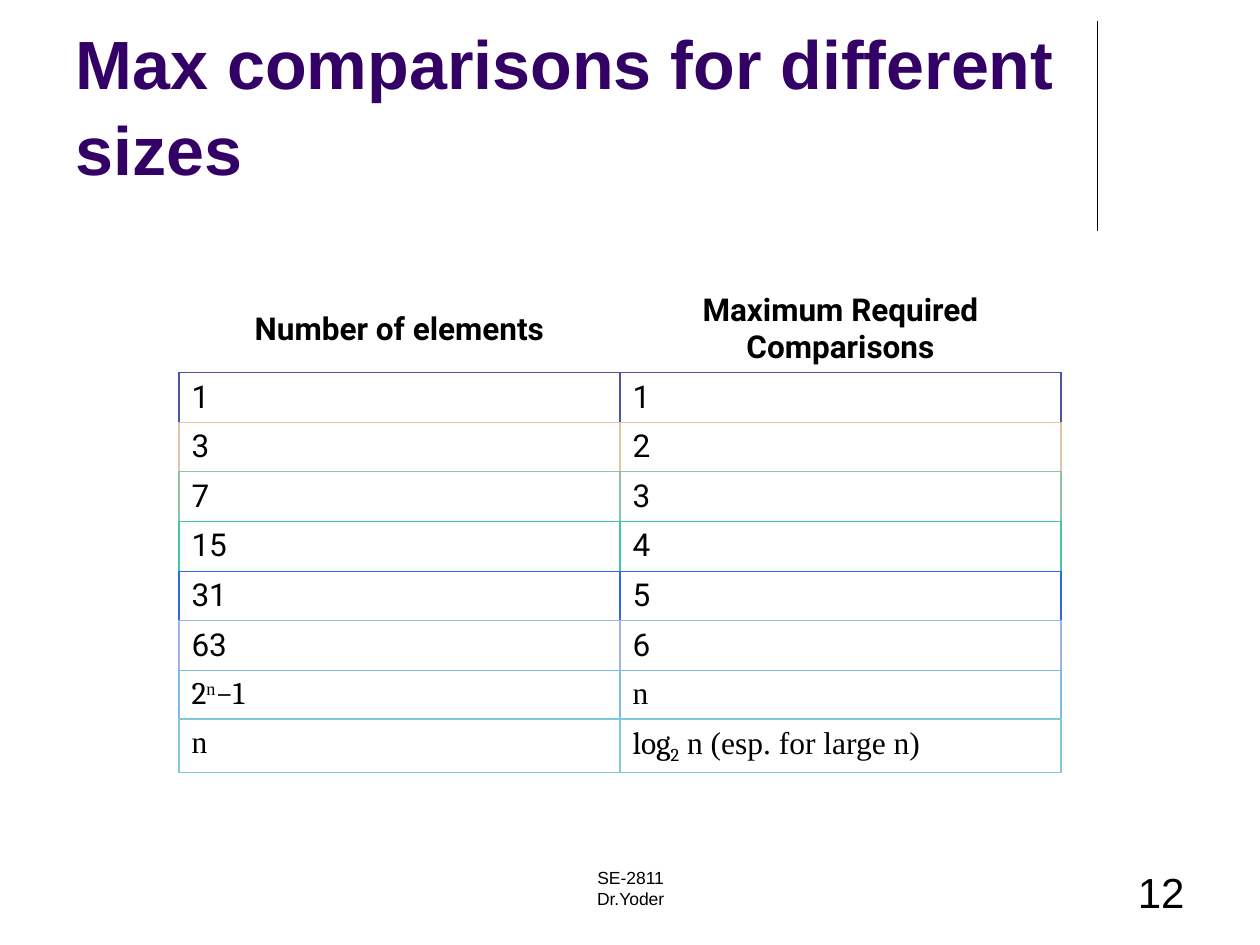
from lxml.etree import SubElement
from pptx import Presentation
from pptx.dml.color import RGBColor
from pptx.enum.shapes import MSO_CONNECTOR
from pptx.enum.text import MSO_ANCHOR, MSO_AUTO_SIZE, PP_ALIGN
from pptx.oxml import parse_xml
from pptx.oxml.ns import nsdecls, qn
from pptx.util import Inches, Pt

BLACK = RGBColor(0x00, 0x00, 0x00)
PURPLE = RGBColor(0x33, 0x00, 0x66)
ROW_COLORS = [RGBColor.from_string(c) for c in (
    "5054A5", "E0C4A5", "90C3A5", "40C5A5", "3066E7", "A0B5E7", "80BAE7", "80CAD9")]

SANS, SERIF, MATH = "Roboto", "Times New Roman", "Cambria"
HEADERS = ["Number of elements", "Maximum Required Comparisons"]
# Each cell is a list of runs: text, font, baseline shift in percent
ROWS = [[[(str(2 ** k - 1), SANS, 0)], [(str(k), SANS, 0)]] for k in range(1, 7)] + [
    [[("2", MATH, 0), ("n", SERIF, 30), ("−1", MATH, 0)], [("n", SERIF, 0)]],
    [[("n", SERIF, 0)],
     [("log", MATH, 0), ("2", MATH, -25), (" n (esp. for large n)", SERIF, 0)]],
]
HEADER_HEIGHT, ROW_HEIGHT, LAST_HEIGHT = 0.68, 0.39, 0.42


def style_font(font, name, size, color=BLACK, bold=False):
    font.name, font.size, font.bold = name, Pt(size), bold
    font.color.rgb = color


def add_title(slide, text):
    sp = slide.shapes.title
    sp.left, sp.top, sp.width, sp.height = map(Inches, (0.5, 0.13, 8.25, 1.42))
    tf = sp.text_frame
    tf.text = text
    tf.auto_size = MSO_AUTO_SIZE.NONE
    tf.vertical_anchor = MSO_ANCHOR.BOTTOM
    p = tf.paragraphs[0]
    p.alignment = PP_ALIGN.LEFT
    p.line_spacing = 1.05
    style_font(p.runs[0].font, "Arial", 39, PURPLE, True)


def add_rule(slide):
    line = slide.shapes.add_connector(
        MSO_CONNECTOR.STRAIGHT, Inches(8.71), Inches(0.17), Inches(8.71), Inches(1.83))
    line.line.color.rgb = BLACK
    line.line.width = Pt(0.75)
    SubElement(line._element.spPr, qn("a:effectLst"))


def add_text(slide, left, width, lines, size, align):
    sp = slide.shapes.add_textbox(Inches(left), Inches(6.83), Inches(width), Inches(0.5))
    tf = sp.text_frame
    tf.word_wrap = True
    tf.text = "\n".join(lines)
    for p in tf.paragraphs:
        p.alignment = align
        style_font(p.runs[0].font, "Arial", size)


def set_borders(cell, borders):
    """Draw borders given as (side, colour, points), in the order L, R, T, B."""
    tc_pr = cell._tc.get_or_add_tcPr()
    for i, (side, color, width) in enumerate(borders):
        tc_pr.insert(i, parse_xml(
            f'<a:ln{side} {nsdecls("a")} w="{Pt(width)}"><a:solidFill>'
            f'<a:srgbClr val="{color}"/></a:solidFill></a:ln{side}>'))


def fill_cell(cell, runs, bold=False):
    cell.fill.background()
    p = cell.text_frame.paragraphs[0]
    for text, font, shift in runs:
        r = p.add_run()
        r.text = text
        style_font(r.font, font, 18, bold=bold)
        if shift:
            r.font._element.set("baseline", str(shift * 1000))


def add_comparison_table(slide):
    heights = [HEADER_HEIGHT] + [ROW_HEIGHT] * (len(ROWS) - 1) + [LAST_HEIGHT]
    table = slide.shapes.add_table(
        len(heights), 2, Inches(1.42), Inches(2.27), Inches(7), Inches(sum(heights))).table
    table.first_row = table.horz_banding = False
    for row, height in zip(table.rows, heights):
        row.height = Inches(height)

    for c, header in enumerate(HEADERS):
        cell = table.cell(0, c)
        fill_cell(cell, [(header, SANS, 0)], bold=True)
        cell.vertical_anchor = MSO_ANCHOR.MIDDLE
        cell.text_frame.paragraphs[0].alignment = PP_ALIGN.CENTER
        set_borders(cell, [("B", ROW_COLORS[0], 0.6)])

    last = len(ROWS) - 1
    for i, row in enumerate(ROWS):
        color, below = ROW_COLORS[i], ROW_COLORS[min(i + 1, last)]
        top = 1.2 if i == last else 0.6
        bottom = 1.2 if i == last - 1 else 0.6
        for c, runs in enumerate(row):
            cell = table.cell(i + 1, c)
            fill_cell(cell, runs)
            set_borders(cell, [("L", color, 1), ("R", color, 1),
                               ("T", color, top), ("B", below, bottom)])


def main():
    prs = Presentation()
    prs.slide_width, prs.slide_height = Inches(10), Inches(7.5)
    slide = prs.slides.add_slide(prs.slide_layouts[5])
    add_rule(slide)
    add_title(slide, "Max comparisons for different sizes")
    add_comparison_table(slide)
    add_text(slide, 3.42, 3.17, ["SE-2811", "Dr.Yoder"], 10, PP_ALIGN.CENTER)
    add_text(slide, 7.17, 2.33, ["12"], 24, PP_ALIGN.RIGHT)
    prs.save("out.pptx")


if __name__ == "__main__":
    main()
